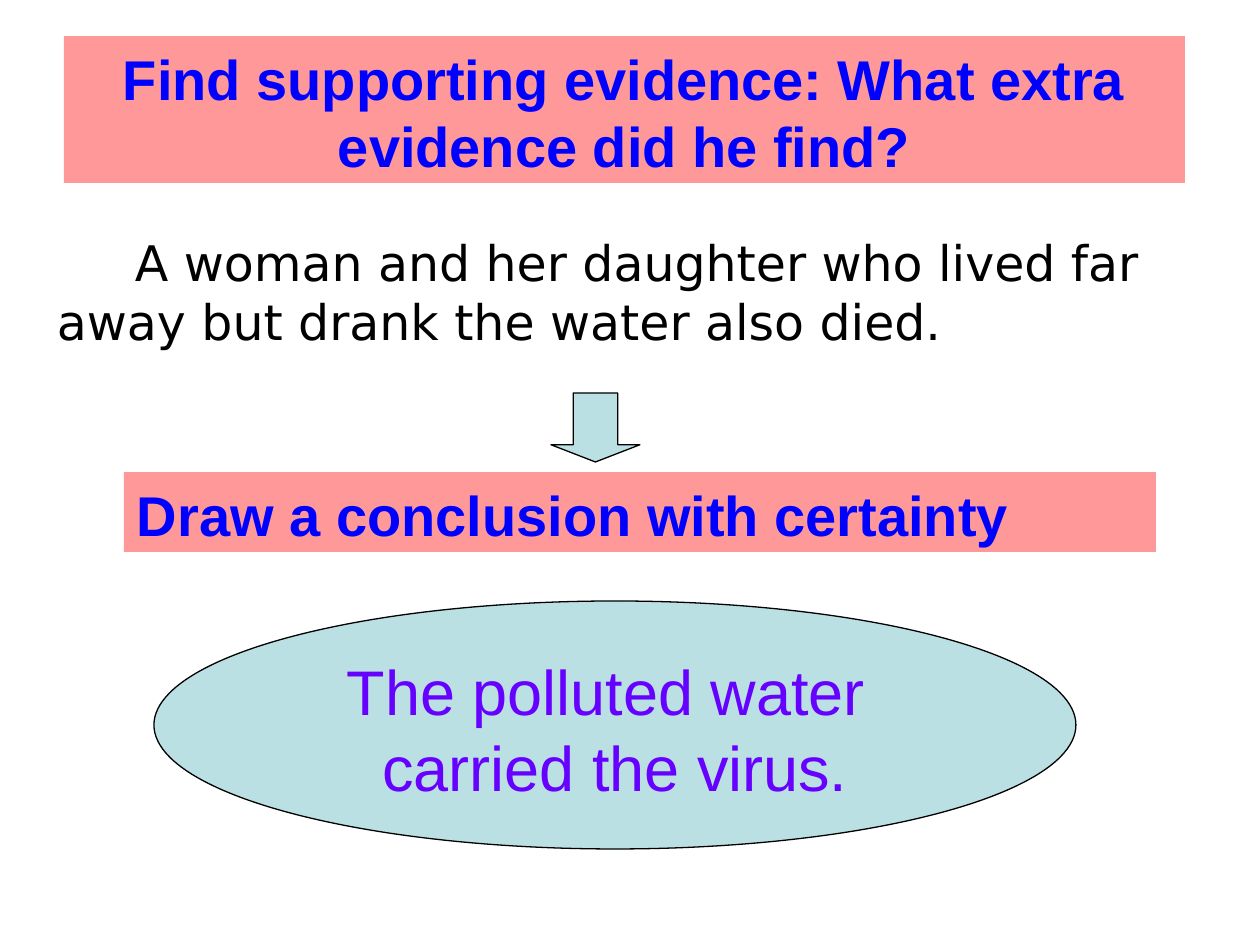
from dataclasses import dataclass

import pptx
import pptx.dml.color
import pptx.enum.shapes
import pptx.enum.text
import pptx.util

EMU_PER_PX = 914400 / 126
SHAPES = pptx.enum.shapes.MSO_SHAPE
ALIGN = pptx.enum.text.PP_ALIGN
ANCHOR = pptx.enum.text.MSO_ANCHOR


@dataclass(frozen=True)
class TextStyle:
    """Type settings for one kind of text."""
    font: str
    size: int
    leading: float
    color: str
    bold: bool = False


@dataclass(frozen=True)
class Theme:
    """Colours and type sizes of the deck."""
    banner: str = "FF9999"
    accent: str = "BBE0E3"
    outline: str = "000000"
    outline_width: float = 0.75
    heading: TextStyle = TextStyle("Arial", 32, 38.25, "0000FF", True)
    body: TextStyle = TextStyle("DejaVu Sans", 28, 33.5, "000000")
    finding: TextStyle = TextStyle("Arial", 36, 43.25, "6600FF")


THEME = Theme()


def px(length):
    """Turn pixels into EMU."""
    return pptx.util.Emu(round(length * EMU_PER_PX))


def rgb(color):
    """Turn a hex string into a colour."""
    return pptx.dml.color.RGBColor.from_string(color)


def place(shape, box):
    """Move a shape to a pixel box."""
    shape.left, shape.top, shape.width, shape.height = map(px, box)


def write(shape, text, style, align=ALIGN.LEFT, anchor=ANCHOR.TOP, wrap=True):
    """Fill a shape with styled text."""
    frame = shape.text_frame
    frame.text = text
    frame.auto_size = pptx.enum.text.MSO_AUTO_SIZE.NONE
    frame.word_wrap = wrap
    frame.vertical_anchor = anchor
    frame.margin_left = frame.margin_right = px(13)
    frame.margin_top, frame.margin_bottom = px(9), px(3)
    for para in frame.paragraphs:
        para.alignment = align
        para.line_spacing = pptx.util.Pt(style.leading)
        for span in para.runs:
            span.font.name = style.font
            span.font.size = pptx.util.Pt(style.size)
            span.font.bold = style.bold
            span.font.color.rgb = rgb(style.color)


def paint(shape, fill, outlined=False):
    """Set the fill and optional outline of a shape."""
    shape.fill.solid()
    shape.fill.fore_color.rgb = rgb(fill)
    if outlined:
        shape.line.color.rgb = rgb(THEME.outline)
        shape.line.width = pptx.util.Pt(THEME.outline_width)
    else:
        shape.line.fill.background()


def add_preset(page, kind, box, fill, outlined=False):
    """Add a painted preset shape without a shadow."""
    shape = page.shapes.add_shape(kind, *map(px, box))
    shape.shadow.inherit = False
    paint(shape, fill, outlined)
    return shape


def draw_title(page, box):
    """Place the title banner."""
    title = page.shapes.title
    place(title, box)
    paint(title, THEME.banner)
    write(title, "Find supporting evidence: What extra evidence did he find?",
          THEME.heading, ALIGN.CENTER)


def draw_evidence(page, box):
    """Place the evidence paragraph with its first-line indent."""
    evidence = page.shapes.add_textbox(*map(px, box))
    write(evidence, "A woman and her daughter who lived far away but drank "
          "the water also died.", THEME.body)
    properties = evidence.text_frame.paragraphs[0]._p.get_or_add_pPr()
    properties.set("indent", str(px(78)))


def draw_conclusion(page, box):
    """Place the arrow, conclusion banner and finding in a box."""
    left, top, width, height = box
    banner = add_preset(page, SHAPES.RECTANGLE,
                        (left, top + 79, width, 80), THEME.banner)
    write(banner, "Draw a conclusion with certainty", THEME.heading)
    arrow = add_preset(page, SHAPES.DOWN_ARROW,
                       (left + 427, top, 89, 69), THEME.accent, True)
    arrow.adjustments[0], arrow.adjustments[1] = 0.5, 0.25
    finding = add_preset(page, SHAPES.OVAL,
                         (left + 30, top + height - 248, 922, 248), THEME.accent, True)
    write(finding, "The polluted water \ncarried the virus.", THEME.finding,
          ALIGN.CENTER, ANCHOR.MIDDLE, False)


def main():
    """Build and save the deck."""
    deck = pptx.Presentation()
    deck.slide_width, deck.slide_height = px(1260), px(945)
    page = deck.slides.add_slide(deck.slide_layouts[5])
    draw_title(page, (64, 36, 1121, 147))
    draw_evidence(page, (44, 224, 1142, 130))
    draw_conclusion(page, (124, 393, 1032, 456))
    deck.save("out.pptx")


if __name__ == "__main__":
    main()
